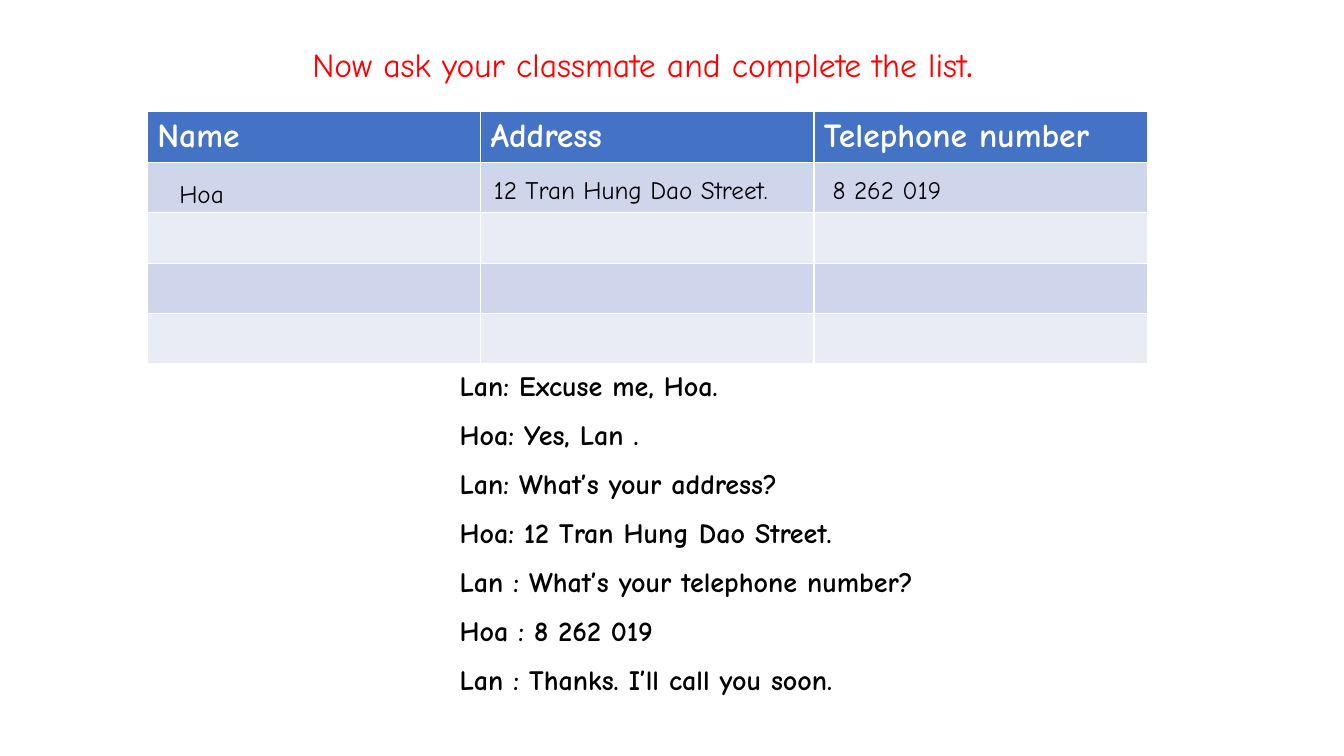
from dataclasses import dataclass

from pptx import Presentation
from pptx import util as u
from pptx.dml.color import RGBColor

TITLE = ("Now ask your classmate and complete the list", ".")
HEADINGS = ("Name", "Address", "Telephone number")
EMPTY_ROWS = 4
# text, left, top, width of each answer laid over the first row
ANSWERS = [
    ("Hoa", 1.68, 1.72, 1.83),
    ("12 Tran Hung Dao Street.", 4.8, 1.68, 3.25),
    ("8 262 019", 8.16, 1.68, 3.25),
]
DIALOGUE = [
    "Lan: Excuse me, Hoa.",
    "Hoa: Yes, Lan .",
    "Lan: What’s your address?",
    "Hoa: 12 Tran Hung Dao Street.",
    "Lan : What’s your telephone number?",
    "Hoa : 8 262 019",
    "Lan : Thanks. I’ll call you soon.",
]


@dataclass(frozen=True)
class Theme:
    font: str = "Comic Neue"
    heading_size: int = 24
    dialogue_size: int = 20
    answer_size: int = 18
    dialogue_gap: int = 11
    red: str = "FF0000"
    black: str = "000000"
    white: str = "FFFFFF"
    header: str = "4472C4"
    bands: tuple = ("CFD5EA", "E9EBF5")


THEME = Theme()
SLIDE_WIDTH, SLIDE_HEIGHT = 13.33, 7.5
TABLE_LEFT, TABLE_TOP, TABLE_WIDTH = 1.46, 1.11, 9.92
ROW_HEIGHT = SLIDE_HEIGHT / 15


def style(paragraph, size, color, bold=False):
    font = paragraph.font
    font.name, font.size, font.bold = THEME.font, u.Pt(size), bold
    font.color.rgb = RGBColor.from_string(color)


def add_text(slide, box, lines, size, color, bold=False):
    """Add a wrapping text box, one paragraph a line; return its paragraphs."""
    frame = slide.shapes.add_textbox(*map(u.Inches, box)).text_frame
    frame.word_wrap = True
    frame.text = "\n".join(lines)
    for paragraph in frame.paragraphs:
        style(paragraph, size, color, bold)
    return frame.paragraphs


def add_class_list(slide):
    rows = EMPTY_ROWS + 1
    box = (TABLE_LEFT, TABLE_TOP, TABLE_WIDTH, rows * ROW_HEIGHT)
    table = slide.shapes.add_table(rows, len(HEADINGS), *map(u.Inches, box)).table
    for index, row in enumerate(table.rows):
        fill = THEME.bands[(index - 1) % 2] if index else THEME.header
        for cell, heading in zip(row.cells, HEADINGS):
            cell.fill.solid()
            cell.fill.fore_color.rgb = RGBColor.from_string(fill)
            if index == 0:
                cell.text = heading
                style(cell.text_frame.paragraphs[0], THEME.heading_size, THEME.white, True)


def main():
    presentation = Presentation()
    presentation.slide_width = u.Inches(SLIDE_WIDTH)
    presentation.slide_height = u.Inches(SLIDE_HEIGHT)
    slide = presentation.slides.add_slide(presentation.slide_layouts[6])

    sentence, full_stop = TITLE
    title = add_text(slide, (3, 0.39, 7.77, 0.5), [sentence], THEME.heading_size, THEME.red)[0]
    stop_run = title.add_run()
    stop_run.text = full_stop
    stop_run.font.bold = True

    add_class_list(slide)

    dialogue_top = TABLE_TOP + (EMPTY_ROWS + 1) * ROW_HEIGHT
    dialogue = add_text(slide, (4.46, dialogue_top, 7.41, 3.47), DIALOGUE,
                        THEME.dialogue_size, THEME.black, True)
    for paragraph in dialogue[1:]:
        paragraph.space_before = u.Pt(THEME.dialogue_gap)

    for answer, left, top, width in ANSWERS:
        add_text(slide, (left, top, width, 0.4), [answer], THEME.answer_size, THEME.black)

    presentation.save("out.pptx")


if __name__ == "__main__":
    main()
